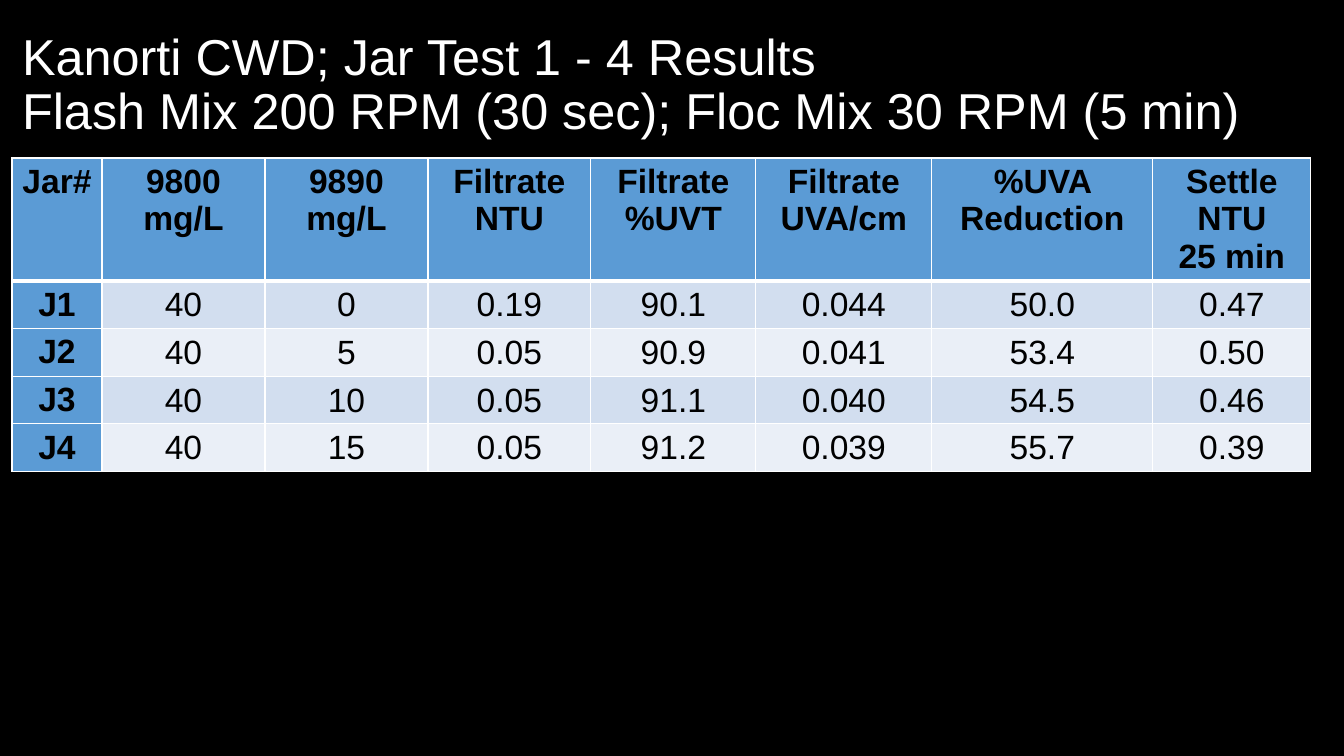
"""Build the jar test results slide."""
from dataclasses import dataclass

from lxml.etree import SubElement
from pptx import Presentation
from pptx.dml.color import RGBColor
from pptx.enum.text import MSO_ANCHOR, MSO_AUTO_SIZE, PP_ALIGN
from pptx.oxml.ns import qn
from pptx.slide import Slide
from pptx.table import Table, _Cell
from pptx.util import Emu, Inches, Pt


@dataclass(frozen=True)
class Theme:
    font: str = "Arial"
    background: str = "000000"
    title: str = "FFFFFF"
    text: str = "000000"
    border: str = "FFFFFF"
    heading: str = "5B9BD5"
    bands: tuple[str, str] = ("D2DEEF", "EAEFF7")
    title_size: int = 36
    cell_size: int = 24
    thin: int = 1
    thick: int = 3


@dataclass(frozen=True)
class Column:
    heading: str
    width: int
    values: tuple[str, ...]


THEME = Theme()
EMU_PER_PX = 914400 / 100.8
HEADER_HEIGHT = 123
ROW_HEIGHT = 47
COLUMNS = (
    Column("Jar#", 90, ("J1", "J2", "J3", "J4")),
    Column("9800\nmg/L", 163, ("40", "40", "40", "40")),
    Column("9890\nmg/L", 163, ("0", "5", "10", "15")),
    Column("Filtrate\nNTU", 163, ("0.19", "0.05", "0.05", "0.05")),
    Column("Filtrate\n%UVT", 165, ("90.1", "90.9", "91.1", "91.2")),
    Column("Filtrate\nUVA/cm", 176, ("0.044", "0.041", "0.040", "0.039")),
    Column("%UVA Reduction", 221, ("50.0", "53.4", "54.5", "55.7")),
    Column("Settle\nNTU\n25 min", 158, ("0.47", "0.50", "0.46", "0.39")),
)


def px(n: int) -> Emu:
    return Emu(round(n * EMU_PER_PX))


def add_title(s: Slide, text: str) -> None:
    sp = s.shapes.title
    sp.left, sp.top, sp.width, sp.height = px(12), px(13), px(1313), px(146)
    tf = sp.text_frame
    tf.text = text
    tf.word_wrap = True
    tf.auto_size = MSO_AUTO_SIZE.NONE
    tf.vertical_anchor = MSO_ANCHOR.MIDDLE
    p = tf.paragraphs[0]
    p.alignment = PP_ALIGN.LEFT
    p.line_spacing = 0.9
    p.font.name = THEME.font
    p.font.size = Pt(THEME.title_size)
    p.font.color.rgb = RGBColor.from_string(THEME.title)


def set_borders(cell: _Cell, row: int) -> None:
    top = THEME.thick if row == 1 else THEME.thin
    bottom = THEME.thick if row == 0 else THEME.thin
    widths = {"lnL": THEME.thin, "lnR": THEME.thin, "lnT": top, "lnB": bottom}
    tc_pr = cell._tc.get_or_add_tcPr()
    for side, width in widths.items():
        ln = SubElement(tc_pr, qn(f"a:{side}"), w=str(Pt(width)))
        fill = SubElement(ln, qn("a:solidFill"))
        SubElement(fill, qn("a:srgbClr"), val=THEME.border)


def fill_cell(table: Table, row: int, col: int, text: str) -> None:
    cell = table.cell(row, col)
    is_heading = row == 0 or col == 0
    cell.text = text
    set_borders(cell, row)
    cell.fill.solid()
    color = THEME.heading if is_heading else THEME.bands[(row - 1) % 2]
    cell.fill.fore_color.rgb = RGBColor.from_string(color)
    if not is_heading:
        cell.vertical_anchor = MSO_ANCHOR.MIDDLE
        cell.margin_left = cell.margin_right = cell.margin_top = Inches(0.01)
        cell.margin_bottom = 0
    for p in cell.text_frame.paragraphs:
        p.alignment = PP_ALIGN.CENTER
        p.font.name = THEME.font
        p.font.size = Pt(THEME.cell_size)
        p.font.bold = is_heading
        p.font.color.rgb = RGBColor.from_string(THEME.text)


def add_results(s: Slide, columns: tuple[Column, ...]) -> None:
    heights = [HEADER_HEIGHT] + [ROW_HEIGHT] * len(columns[0].values)
    width = sum(column.width for column in columns)
    table = s.shapes.add_table(
        len(heights), len(columns), px(12), px(158), px(width), px(sum(heights))
    ).table
    table.first_col = True
    for row, height in enumerate(heights):
        table.rows[row].height = px(height)
    for col, column in enumerate(columns):
        table.columns[col].width = px(column.width)
        for row, text in enumerate((column.heading, *column.values)):
            fill_cell(table, row, col, text)


def main() -> None:
    prs = Presentation()
    prs.slide_width, prs.slide_height = px(1344), px(756)
    s = prs.slides.add_slide(prs.slide_layouts.get_by_name("Title Only"))
    s.background.fill.solid()
    s.background.fill.fore_color.rgb = RGBColor.from_string(THEME.background)
    add_title(
        s,
        "Kanorti CWD; Jar Test 1 - 4 Results\v"
        "Flash Mix 200 RPM (30 sec); Floc Mix 30 RPM (5 min)",
    )
    add_results(s, COLUMNS)
    prs.save("out.pptx")


if __name__ == "__main__":
    main()
